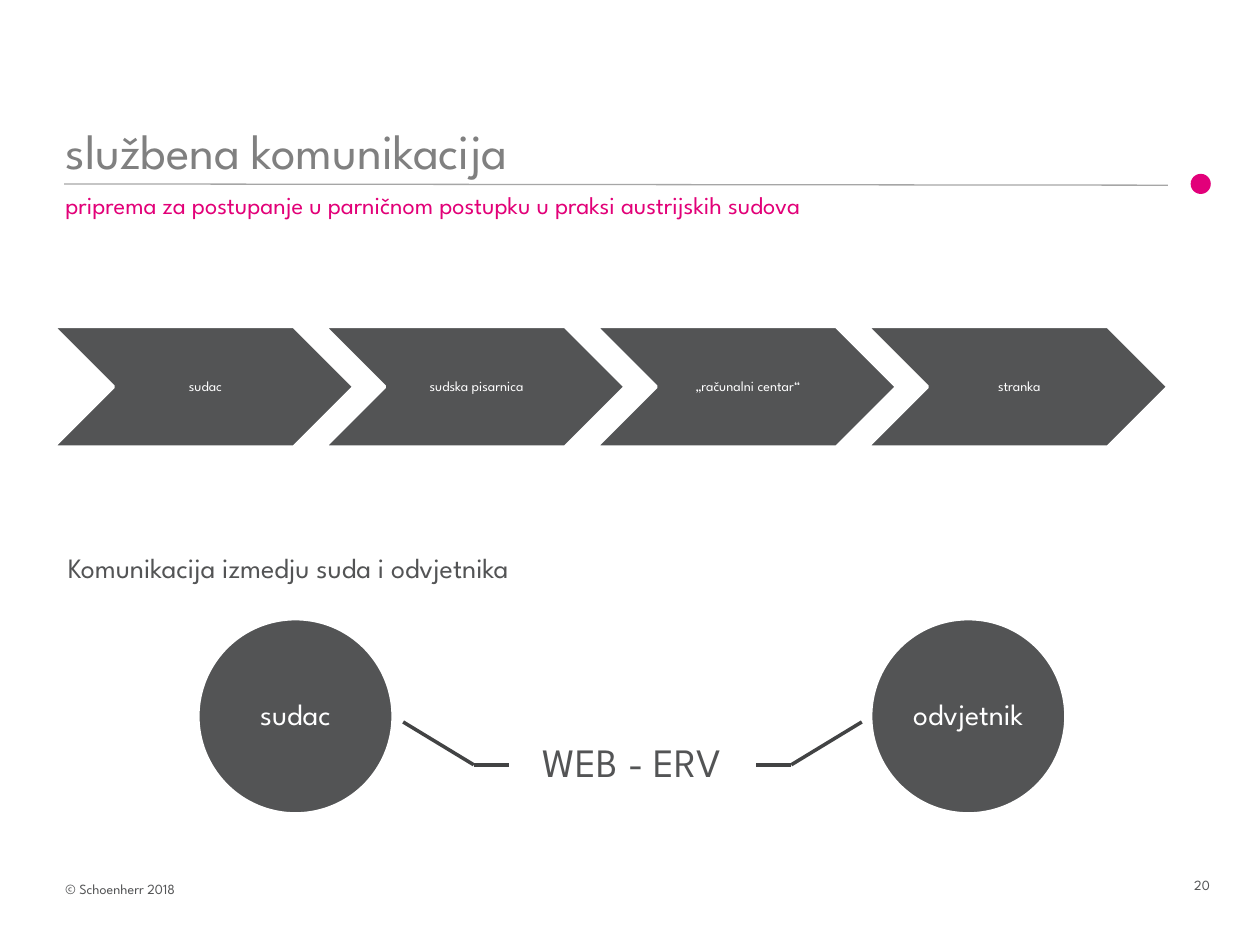
from dataclasses import dataclass

from pptx import Presentation
from pptx.dml.color import RGBColor
from pptx.enum.shapes import MSO_CONNECTOR, MSO_SHAPE
from pptx.enum.text import MSO_ANCHOR, PP_ALIGN
from pptx.oxml.ns import qn
from pptx.util import Inches, Pt

STRAIGHT = MSO_CONNECTOR.STRAIGHT
CHEVRON, OVAL = MSO_SHAPE.CHEVRON, MSO_SHAPE.OVAL
TOP, MIDDLE, BOTTOM = MSO_ANCHOR.TOP, MSO_ANCHOR.MIDDLE, MSO_ANCHOR.BOTTOM
LEFT, CENTER = PP_ALIGN.LEFT, PP_ALIGN.CENTER


@dataclass(frozen=True)
class Theme:
    font: str = "League Spartan"
    dark: RGBColor = RGBColor(0x53, 0x54, 0x55)
    link: RGBColor = RGBColor(0x42, 0x43, 0x44)
    title: RGBColor = RGBColor(0x80, 0x80, 0x80)
    rule: RGBColor = RGBColor(0xA6, 0xA6, 0xA6)
    dot: RGBColor = RGBColor(0xE2, 0x00, 0x7A)
    subtitle: RGBColor = RGBColor(0xE2, 0x00, 0x78)
    white: RGBColor = RGBColor(0xFF, 0xFF, 0xFF)
    title_size: int = 28
    channel_size: int = 23
    circle_size: int = 17
    heading_size: int = 16
    subtitle_size: int = 14
    small_size: int = 8


theme = Theme()


def write(shape, text, size, color, align=LEFT, anchor=TOP,
          insets=(0.1, 0.05, 0.1, 0.05), spacing=1.0):
    frame = shape.text_frame
    frame.word_wrap = True
    frame.vertical_anchor = anchor
    (frame.margin_left, frame.margin_top,
     frame.margin_right, frame.margin_bottom) = map(Inches, insets)
    frame.text = text
    paragraph = frame.paragraphs[0]
    paragraph.alignment = align
    paragraph.line_spacing = spacing
    paragraph.space_before = Pt(0)
    paragraph.font.name = theme.font
    paragraph.font.size = Pt(size)
    paragraph.font.color.rgb = color


def add_line(slide, x1, y1, x2, y2, color, width):
    line = slide.shapes.add_connector(
        STRAIGHT, Inches(x1), Inches(y1), Inches(x2), Inches(y2))
    line.line.color.rgb = color
    line.line.width = Pt(width)
    properties = line._element.spPr
    properties.append(properties.makeelement(qn("a:effectLst"), {}))


presentation = Presentation()
presentation.slide_width = Inches(10)
presentation.slide_height = Inches(7.5)
slide = presentation.slides.add_slide(presentation.slide_layouts[5])

# Rule and dot under the title
add_line(slide, 0.51, 1.46, 9.27, 1.47, theme.rule, 0.75)
dot = slide.shapes.add_shape(
    OVAL, Inches(9.45), Inches(1.38), Inches(0.16), Inches(0.16))
dot.shadow.inherit = False
dot.fill.solid()
dot.fill.fore_color.rgb = theme.dot
dot.line.fill.background()

# Title
title = slide.shapes.title
title.left, title.top = Inches(0.42), Inches(0.92)
title.width, title.height = Inches(8.86), Inches(0.55)
write(title, "službena komunikacija", theme.title_size, theme.title,
      anchor=BOTTOM)

# Subtitle, section heading and footer
texts = [
    ("priprema za postupanje u parničnom postupku u praksi austrijskih sudova",
     0.42, 1.46, 8.11, 0.47, theme.subtitle_size, theme.subtitle),
    ("Komunikacija izmedju suda i odvjetnika",
     0.44, 4.32, 8.86, 0.49, theme.heading_size, theme.dark),
    ("© Schoenherr 2018", 0.42, 6.94, 2.2, 0.24, theme.small_size, theme.dark),
    ("20", 9.38, 6.91, 0.47, 0.24, theme.small_size, theme.dark),
]
for text, left, top, width, height, size, color in texts:
    box = slide.shapes.add_textbox(
        Inches(left), Inches(top), Inches(width), Inches(height))
    write(box, text, size, color)

# Chevron process and the two communicating parties
steps = ["sudac", "sudska pisarnica", "„računalni centar“", "stranka"]
first_left, last_left = 0.42, 6.88
step_pitch = (last_left - first_left) / (len(steps) - 1)
nodes = [(CHEVRON, text, first_left + index * step_pitch, 2.59, 2.39, 0.96,
          theme.small_size, (0.04, 0.01, 0.01, 0.01))
         for index, text in enumerate(steps)]
nodes += [(OVAL, text, left, 4.91, 1.55, 1.55, theme.circle_size, (0, 0, 0, 0))
          for text, left in (("sudac", 1.57), ("odvjetnik", 6.91))]
for kind, text, left, top, width, height, size, insets in nodes:
    node = slide.shapes.add_shape(
        kind, Inches(left), Inches(top), Inches(width), Inches(height))
    node.shadow.inherit = False
    node.fill.solid()
    node.fill.fore_color.rgb = theme.dark
    node.line.color.rgb = theme.white
    node.line.width = Pt(2)
    write(node, text, size, theme.white, CENTER, MIDDLE, insets, 0.9)

# Channel between the parties, with mirrored bent links
channel = slide.shapes.add_textbox(
    Inches(4.04), Inches(5.68), Inches(1.96), Inches(0.78))
write(channel, "WEB - ERV", theme.channel_size, theme.dark, CENTER, MIDDLE,
      (0.18, 0.18, 0.18, 0.18), 0.9)
mirror_axis = 5.02
for side in (-1, 1):
    outer, bend, inner = (mirror_axis + side * offset
                          for offset in (1.82, 1.26, 0.98))
    add_line(slide, outer, 5.73, bend, 6.07, theme.link, 2)
    add_line(slide, bend, 6.07, inner, 6.07, theme.link, 2)

presentation.save("out.pptx")
